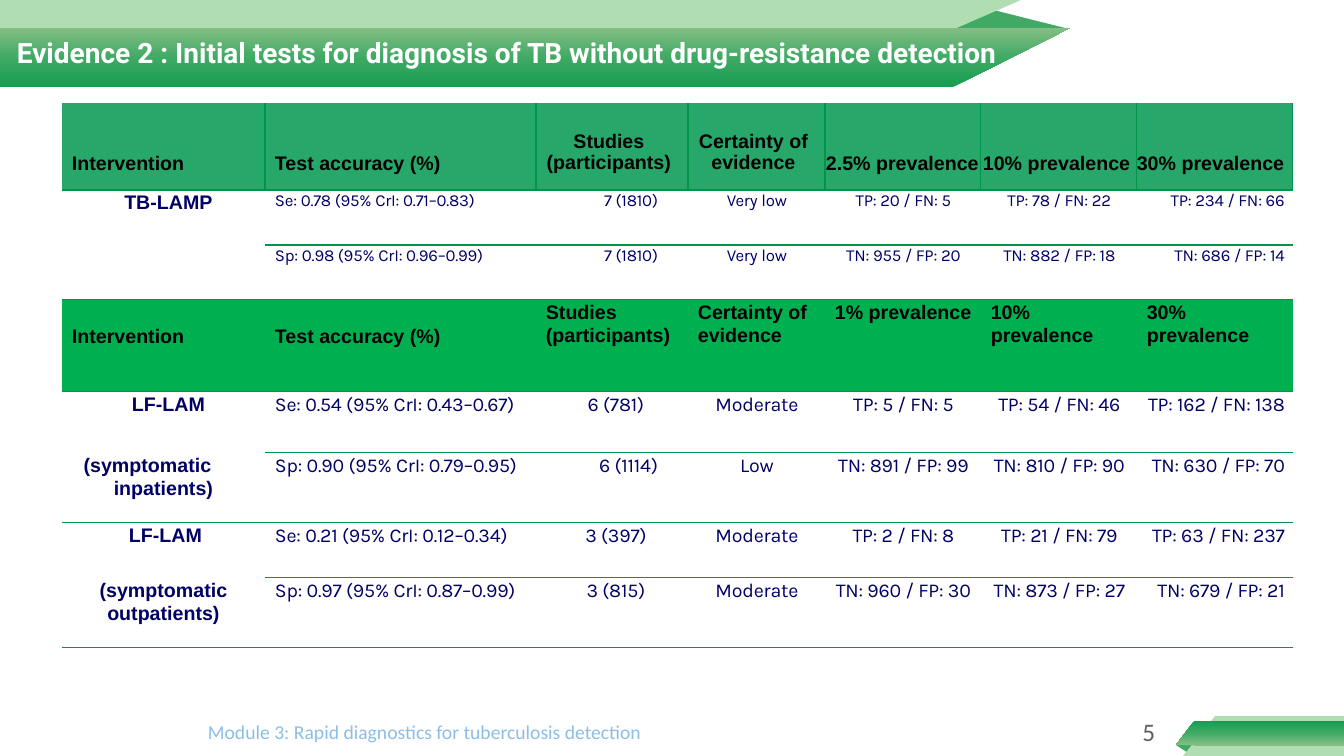
import pptx
import pptx.util
import pptx.oxml.ns
import pptx.dml.color
import pptx.enum.text
import pptx.enum.shapes
import lxml.etree

HUES = {
    "deep": "159D51", "mid": "40AA65", "soft": "83BE84", "pale": "B0DDB2",
    "rule": "009649", "head": "27A86A", "band": "00B050", "navy": "000066",
    "black": "000000", "white": "FFFFFF", "sky": "8DBEE6", "grey": "606060",
}
KINDS = pptx.enum.shapes.MSO_SHAPE
ALIGN = pptx.enum.text.PP_ALIGN
LEFT, MID, RIGHT = ALIGN.LEFT, ALIGN.CENTER, ALIGN.RIGHT
SCALE = 12192000 / 1344


def px(size):
    return pptx.util.Emu(round(size * SCALE))


def hue(name):
    return pptx.dml.color.RGBColor.from_string(HUES[name])


def node(base, tag, **attrs):
    return lxml.etree.SubElement(base, pptx.oxml.ns.qn(tag), attrs)


class Deck:
    def __init__(self):
        self.show = pptx.Presentation()
        self.show.slide_width = px(1344)
        self.show.slide_height = px(756)
        self.slide = self.show.slides.add_slide(self.show.slide_layouts[6])

    def shape(self, kind, box, fill, turn=0, flips=(), peak=None):
        item = self.slide.shapes.add_shape(kind, *map(px, box))
        item.shadow.inherit = False
        item.line.fill.background()
        item.rotation = turn
        for flip in flips:
            item._element.spPr.xfrm.set(flip, "1")
        if peak is not None:
            item.adjustments[0] = peak
        if fill == "blend":
            self.blend(item)
        else:
            item.fill.solid()
            item.fill.fore_color.rgb = hue(fill)

    def blend(self, item):
        item.fill.gradient()
        item.fill.gradient_angle = 270
        stops = item._element.spPr.find(".//" + pptx.oxml.ns.qn("a:gsLst"))
        for stop in list(stops):
            stops.remove(stop)
        for spot, name in enumerate(("deep", "mid", "soft")):
            stop = node(stops, "a:gs", pos=str(spot * 50000))
            node(stop, "a:srgbClr", val=HUES[name])

    def run(self, para, text, font, size, color, bold=False, space=0):
        part = para.add_run()
        part.text = text
        part.font.name = font
        part.font.size = pptx.util.Pt(size)
        part.font.bold = bold
        part.font.color.rgb = hue(color)
        if space:
            part._r.get_or_add_rPr().set("spc", str(space))

    def label(self, box, text, align=LEFT, **style):
        frame = self.slide.shapes.add_textbox(*map(px, box)).text_frame
        frame.word_wrap = True
        para = frame.paragraphs[0]
        para.alignment = align
        self.run(para, text, **style)

    def table(self, left, top, cols, rows):
        area = [px(size) for size in (left, top, sum(cols), sum(rows))]
        grid = self.slide.shapes.add_table(len(rows), len(cols), *area).table
        grid.first_row = grid.horz_banding = False
        for col, width in zip(grid.columns, cols):
            col.width = px(width)
        for row, height in zip(grid.rows, rows):
            row.height = px(height)
        return grid

    def frame(self, cell, sides, fill):
        props = cell._tc.get_or_add_tcPr()
        for side in "LRTB":
            edge = node(props, "a:ln" + side, w="12700")
            if side in sides:
                node(node(edge, "a:solidFill"), "a:srgbClr", val=HUES["rule"])
            else:
                node(edge, "a:noFill")
        if fill:
            cell.fill.solid()
            cell.fill.fore_color.rgb = hue(fill)
        else:
            cell.fill.background()

    def cell(self, cell, text, sides, fill=None, align=LEFT, inset=(0, 0, 0),
             pitch=1.07, hang=0, **style):
        self.frame(cell, sides, fill)
        cell.margin_left, cell.margin_top, cell.margin_right = map(px, inset)
        cell.margin_bottom = 0
        if not text:
            return
        para = cell.text_frame.paragraphs[0]
        para.alignment = align
        para.line_spacing = pitch
        if hang:
            props = para._p.get_or_add_pPr()
            props.set("marL", str(px(hang)))
            props.set("indent", str(-px(hang)))
        self.run(para, text, **style)


HEAD = dict(font="Arial", size=14, color="black", bold=True)
TAG = dict(HEAD, color="navy", align=MID)
NAMES = ["Intervention", "Test accuracy (%)", "Studies (participants)",
         "Certainty of evidence"]
RATES = ["10% prevalence", "30% prevalence"]
ROWS = {
    1: ["TB-LAMP", "Se: 0.78 (95% CrI: 0.71–0.83)", "7 (1810)", "Very low",
        "TP: 20 / FN: 5", "TP: 78 / FN: 22", "TP: 234 / FN: 66"],
    2: ["", "Sp: 0.98 (95% CrI: 0.96–0.99)", "7 (1810)", "Very low",
        "TN: 955 / FP: 20", "TN: 882 / FP: 18", "TN: 686 / FP: 14"],
    4: ["LF-LAM", "Se: 0.54 (95% CrI: 0.43–0.67)", "6 (781)", "Moderate",
        "TP: 5 / FN: 5", "TP: 54 / FN: 46", "TP: 162 / FN: 138"],
    5: ["(symptomatic inpatients)", "Sp: 0.90 (95% CrI: 0.79–0.95)",
        "6 (1114)", "Low",
        "TN: 891 / FP: 99", "TN: 810 / FP: 90", "TN: 630 / FP: 70"],
    6: ["LF-LAM", "Se: 0.21 (95% CrI: 0.12–0.34)", "3 (397)", "Moderate",
        "TP: 2 / FN: 8", "TP: 21 / FN: 79", "TP: 63 / FN: 237"],
    7: ["(symptomatic outpatients)", "Sp: 0.97 (95% CrI: 0.87–0.99)",
        "3 (815)", "Moderate",
        "TN: 960 / FP: 30", "TN: 873 / FP: 27", "TN: 679 / FP: 21"],
}
TAGS = {1: dict(inset=(10, 0, 0)), 4: dict(inset=(10, 0, 0)),
        5: dict(inset=(0, 0, 32), hang=32), 6: dict(inset=(4, 0, 0))}
TOPS = [(LEFT, (10, 48, 0)), (LEFT, (10, 48, 0)), (MID, (0, 29, 6)),
        (MID, (0, 29, 6)), (LEFT, (1, 48, 0)), (LEFT, (2, 48, 0)),
        (LEFT, (0, 48, 0))]


def trim(deck):
    rect, wedge = KINDS.RECTANGLE, KINDS.RIGHT_TRIANGLE
    deck.shape(KINDS.ISOSCELES_TRIANGLE, (951, 9, 118, 20), "mid", peak=0.324)
    for kind, box, fill in ((rect, (0, 0, 822, 87), "pale"),
                            (wedge, (821, 0, 200, 87), "pale"),
                            (rect, (0, 28, 953, 59), "blend"),
                            (wedge, (953, 28, 117, 59), "blend")):
        deck.shape(kind, box, fill, 180, ["flipH"])
    deck.shape(KINDS.ISOSCELES_TRIANGLE, (1176, 745, 18, 8), "mid",
               flips=["flipH", "flipV"], peak=0.324)
    for kind, box, fill in ((rect, (1215, 716, 129, 40), "pale"),
                            (wedge, (1183, 716, 32, 40), "pale"),
                            (rect, (1194, 721, 150, 24), "blend"),
                            (wedge, (1176, 721, 18, 24), "blend")):
        deck.shape(kind, box, fill, 180, ["flipV"])


def results(deck):
    grid = deck.table(62, 103, [203, 271, 152, 137, 156, 156, 156],
                      [87, 55, 55, 92, 61, 70, 55, 70])
    heads = NAMES + ["2.5% prevalence"] + RATES
    for col, (text, (align, inset)) in enumerate(zip(heads, TOPS)):
        sides = "RB" if col == 0 else "LRB"
        deck.cell(grid.cell(0, col), text, sides, "head", align, inset,
                  0.95 if align == MID else 1.07, **HEAD)
    for col, text in enumerate(NAMES + ["1% prevalence"] + RATES):
        deck.cell(grid.cell(3, col), text, "TB", "band",
                  inset=(10, 24 if col < 2 else 0, 0), **HEAD)
    for row, texts in ROWS.items():
        body = dict(font="Karla", size=12 if row < 3 else 14,
                    color="navy", space=-15)
        side = "T" if row in (1, 4, 6) else "B"
        deck.cell(grid.cell(row, 0), texts[0], side, **TAG, **TAGS.get(row, {}))
        count = (RIGHT, (0, 0, 30)) if len(texts[2]) > 7 else (MID, (8, 0, 0))
        spots = [(LEFT, (10, 0, 0)), count] + [(MID, (1, 0, 0))] * 3
        spots.append((RIGHT, (0, 0, 8)))
        for col, (align, inset) in enumerate(spots, 1):
            deck.cell(grid.cell(row, col), texts[col], "TB", None, align,
                      inset, **body)


def main():
    deck = Deck()
    trim(deck)
    results(deck)
    deck.label((7, 31, 1034, 44), "Evidence 2 : Initial tests for diagnosis "
               "of TB without drug-resistance detection",
               font="Roboto", size=20, color="white", bold=True)
    deck.label((198, 715, 808, 40),
               "Module 3: Rapid diagnostics for tuberculosis detection",
               font="Calibri", size=14, color="sky")
    deck.label((1021, 711, 144, 40), "5", RIGHT,
               font="Calibri", size=18, color="grey")
    deck.show.save("out.pptx")


if __name__ == "__main__":
    main()
